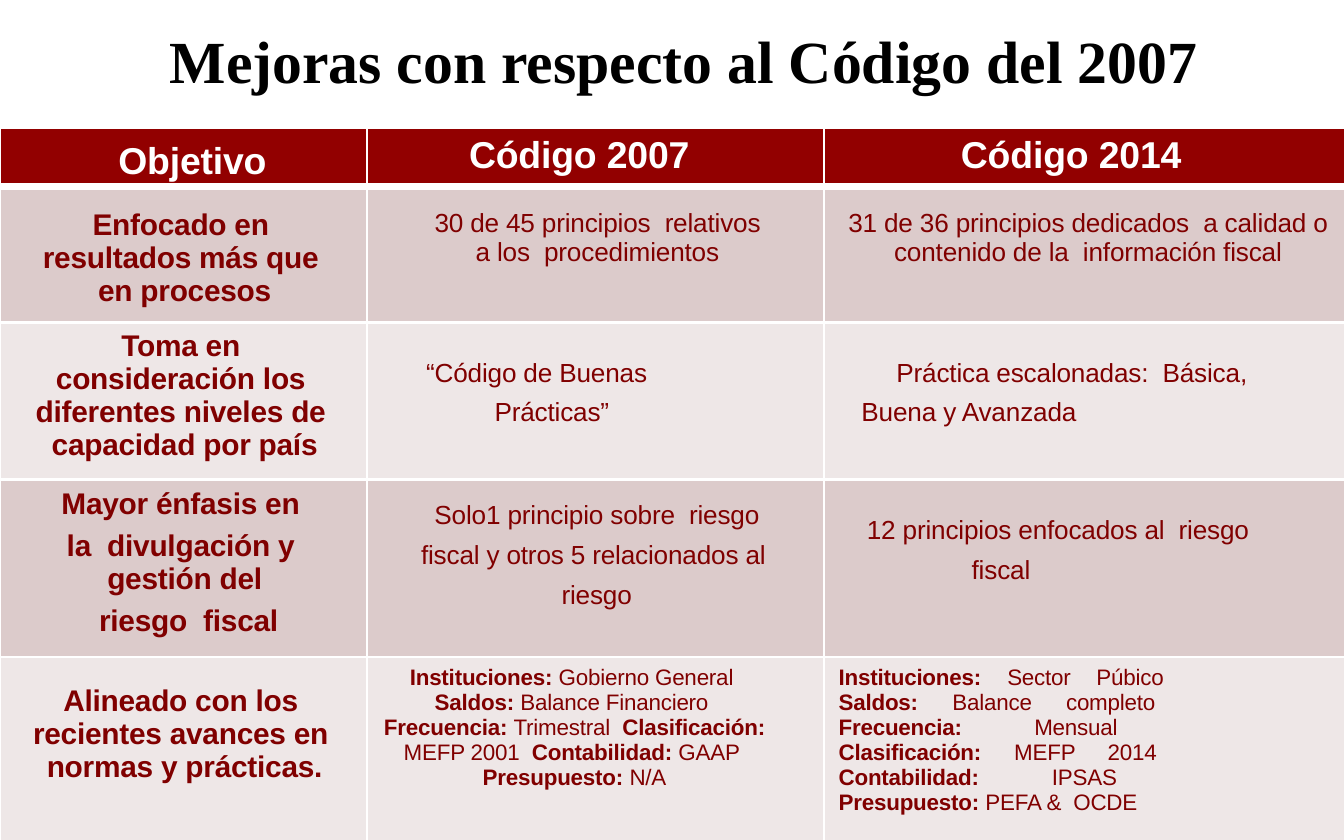
from lxml import etree
from pptx import Presentation
from pptx.dml.color import RGBColor
from pptx.enum.text import MSO_ANCHOR, MSO_AUTO_SIZE, PP_ALIGN
from pptx.oxml.ns import qn
from pptx.util import Inches, Pt

LEFT, MID, JUST = PP_ALIGN.LEFT, PP_ALIGN.CENTER, PP_ALIGN.JUSTIFY
TOP, CENTRE = MSO_ANCHOR.TOP, MSO_ANCHOR.MIDDLE
NOFIT = MSO_AUTO_SIZE.NONE
WIDE, HIGH = 100, 62.5  # grid columns and rows of the slide
WHITE, RED, WINE = "FFFFFF", "920000", "800000"
BANDS = ["DCCBCB", "EEE7E7"]
FIXED = Pt(21.3)


def rgb(code):
    return RGBColor.from_string(code)


class Deck:
    def __init__(self):
        self.prs = Presentation()
        self.prs.slide_width, self.prs.slide_height = Inches(10), Inches(6.25)
        self.slide = self.prs.slides.add_slide(self.prs.slide_layouts[5])

    def col(self, n):
        return round(self.prs.slide_width * n / WIDE)

    def row(self, n):
        return round(self.prs.slide_height * n / HIGH)

    def font(self, para, size, color, bold, name="Arial"):
        font = para.font
        font.name, font.size, font.bold = name, Pt(size), bold
        font.color.rgb = rgb(color)

    def title(self, text, x, y, w, h):
        box = self.slide.shapes.title
        box.left, box.top = self.col(x), self.row(y)
        box.width, box.height = self.col(w), self.row(h)
        frame = box.text_frame
        frame.text, frame.auto_size = text, NOFIT
        frame.vertical_anchor = CENTRE
        para = frame.paragraphs[0]
        para.alignment, para.line_spacing = MID, 0.9
        self.font(para, 32, "000000", True, "Times New Roman")

    def table(self, y, cols, rows):
        frame = self.slide.shapes.add_table(
            len(rows), len(cols), 0, self.row(y),
            self.col(sum(cols)), self.row(sum(rows)))
        for part, n in zip(frame.table.columns, cols):
            part.width = self.col(n)
        for part, n in zip(frame.table.rows, rows):
            part.height = self.row(n)
        return frame.table

    def edges(self, cell, top, base):
        props = cell._tc.get_or_add_tcPr()
        sides = {"lnL": 1.5, "lnR": 1.5, "lnT": top, "lnB": base}
        for at, (side, width) in enumerate(sides.items()):
            line = etree.Element(qn("a:" + side), w=str(Pt(width)))
            fill = etree.SubElement(line, qn("a:solidFill"))
            etree.SubElement(fill, qn("a:srgbClr"), val=WHITE)
            props.insert(at, line)

    def cell(self, cell, fill, color, bold, text, size, top, left,
             right=0, first=0, align=MID, space=1.0, gap=0):
        """Asterisks switch bold on and off; line ends part paragraphs."""
        cell.fill.solid()
        cell.fill.fore_color.rgb = rgb(fill)
        cell.vertical_anchor = TOP
        cell.margin_left = cell.margin_right = cell.margin_bottom = 0
        cell.margin_top = self.row(top)
        frame = cell.text_frame
        for i, line in enumerate(text.split("\n")):
            para = frame.add_paragraph() if i else frame.paragraphs[0]
            para.alignment, para.line_spacing = align, space
            if i:
                para.space_before = Pt(gap)
            props = para._p.get_or_add_pPr()
            props.set("marL", str(self.col(left)))
            props.set("marR", str(self.col(right)))
            props.set("indent", str(self.col(first)))
            parts = line.split("*")
            for k, part in enumerate(parts):
                if part:
                    run = para.add_run()
                    run.text = part
                    if len(parts) > 1:
                        run.font.bold = k % 2 == 1
            self.font(para, size, color, bold)
            props.find(qn("a:defRPr")).set("spc", "-10")


# Each cell: text, size, top inset, left indent, right indent, options
HEAD = [
    ("Objetivo", 20, 1, 8.8, 0, {"align": LEFT}),
    ("Código 2007", 20, 0.5, 7.6, 0, {"align": LEFT}),
    ("Código 2014", 20, 0.5, 10.2, 0, {"align": LEFT}),
]
TIGHT = {"space": 0.99}
BODY = [
    [("Enfocado en  resultados más que  en procesos", 16, 1.7, 2, 1.8, TIGHT),
     ("30 de 45 principios  relativos a los  procedimientos",
      14, 1.7, 4.6, 4.3, TIGHT),
     ("31 de 36 principios dedicados  a calidad o contenido de la  "
      "información fiscal", 14, 1.7, 1.1, 0.9, TIGHT)],
    [("Toma en  consideración los  diferentes niveles de  capacidad por país",
      16, 0.5, 1.4, 1.2, {}),
     ("“Código de Buenas  Prácticas”", 14, 1.9, 9.5, 7.7,
      {"first": -5.1, "align": LEFT, "space": FIXED}),
     ("Práctica escalonadas:  Básica, Buena y Avanzada", 14, 1.9, 2.8, 4.4,
      {"first": 2.6, "align": LEFT, "space": FIXED})],
    [("Mayor énfasis en \nla  divulgación y  gestión del\n riesgo  fiscal",
      16, 0.6, 2.2, 2, {"gap": 4.6}),
     ("Solo1 principio sobre  riesgo fiscal y otros 5 relacionados al  riesgo",
      14, 0.8, 3.4, 3.2, {"space": FIXED}),
     ("12 principios enfocados al  riesgo fiscal", 14, 1.9, 11, 4.8,
      {"first": -7.8, "align": LEFT, "space": FIXED})],
    [("Alineado con los  recientes avances en  normas y prácticas.",
      16, 2.1, 1.2, 1, TIGHT),
     ("*Instituciones: *Gobierno General  *Saldos: *Balance Financiero  "
      "*Frecuencia: *Trimestral  *Clasificación: *MEFP 2001  "
      "*Contabilidad: *GAAP  *Presupuesto: *N/A", 12, 0.6, 1.1, 4.2, {}),
     ("*Instituciones: *Sector Púbico  *Saldos: *Balance completo  "
      "*Frecuencia: *Mensual  *Clasificación: *MEFP 2014  "
      "*Contabilidad: *IPSAS  *Presupuesto: *PEFA &  OCDE",
      12, 0.6, 1.1, 11.9, {"align": JUST})],
]


def main():
    deck = Deck()
    deck.title("Mejoras con respecto al Código del 2007", 8.7, 0, 84.4, 9.5)

    # Comparison table, with a thick rule below its head
    grid = deck.table(9.5, [27.3, 34, 39.1], [4.4, 10.1, 11.7, 13.2, 13.8])
    for r, line in enumerate([HEAD] + BODY):
        fill = BANDS[(r - 1) % 2] if r else RED
        color = WINE if r else WHITE
        for c, (text, size, top, left, right, more) in enumerate(line):
            cell = grid.cell(r, c)
            deck.cell(cell, fill, color, r == 0 or c == 0,
                      text, size, top, left, right, **more)
            deck.edges(cell, 4.25 if r == 1 else 1.5, 1.5 if r else 4.25)

    deck.prs.save("out.pptx")


if __name__ == "__main__":
    main()
